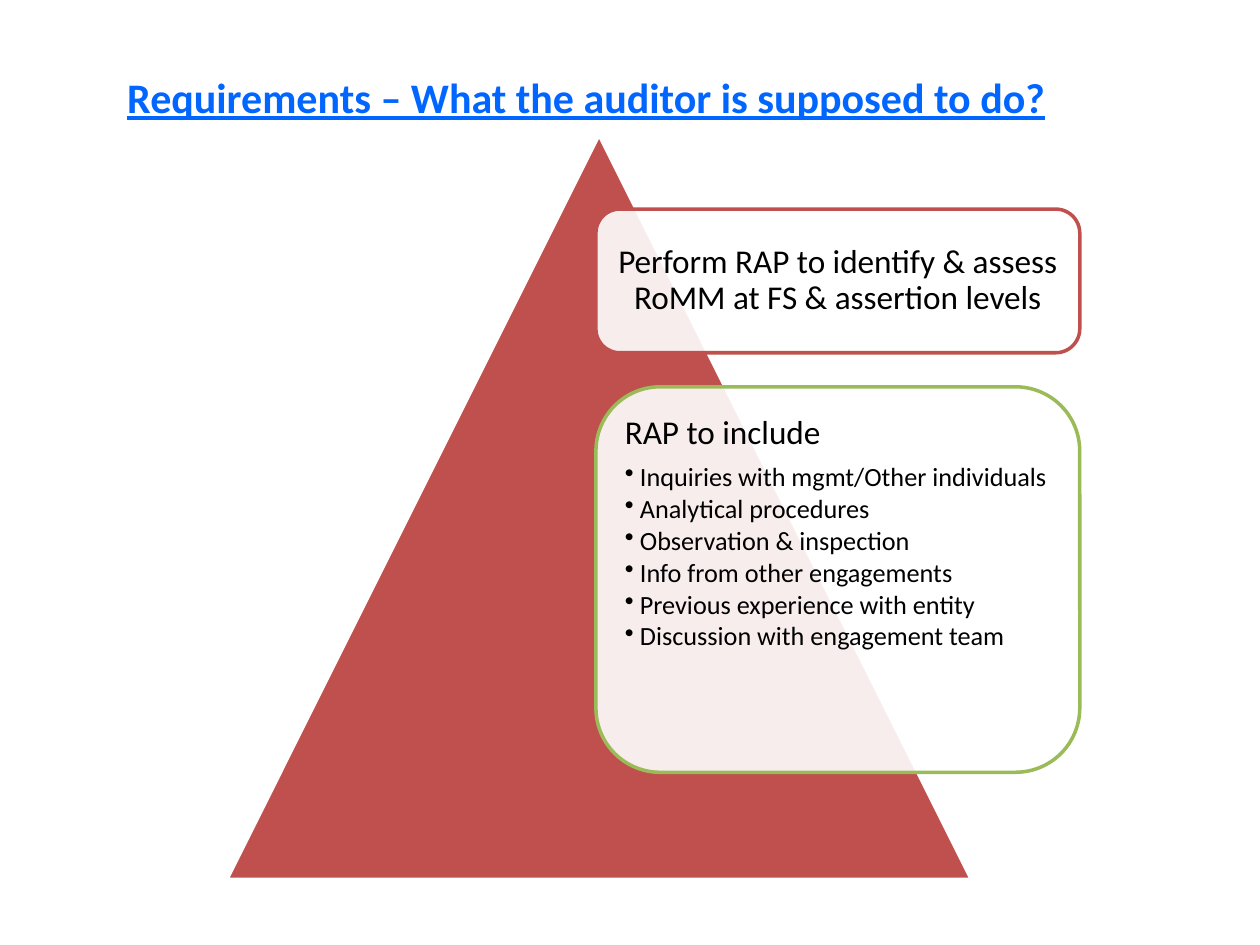
from dataclasses import dataclass

from lxml.etree import SubElement
from pptx import Presentation
from pptx.dml.color import RGBColor
from pptx.enum.shapes import MSO_SHAPE as Kind
from pptx.enum.text import MSO_ANCHOR as Anchor, MSO_AUTO_SIZE as Fit, PP_ALIGN as Align
from pptx.oxml.ns import qn
from pptx.util import Inches, Pt

FONT = "Calibri"
BLUE = RGBColor(0x00, 0x66, 0xFF)
RED = RGBColor(0xC0, 0x50, 0x4D)
GREEN = RGBColor(0x9B, 0xBB, 0x59)
WHITE = RGBColor(0xFF, 0xFF, 0xFF)
BLACK = RGBColor(0x00, 0x00, 0x00)

CARD_LEFT, CARD_WIDTH = 4.73, 3.84


@dataclass
class Card:
    top: float
    height: float
    edge: RGBColor
    head: str
    items: tuple[str, ...] = ()


CARDS = (
    Card(1.66, 1.14, RED,
         "Perform RAP to identify & assess RoMM at FS & assertion levels"),
    Card(3.07, 3.06, GREEN, "RAP to include", (
        "Inquiries with mgmt/Other individuals",
        "Analytical procedures",
        "Observation & inspection",
        "Info from other engagements",
        "Previous experience with entity",
        "Discussion with engagement team",
    )),
)


def add_form(slide, kind: Kind, box: tuple[float, ...], fill: RGBColor, edge: RGBColor):
    form = slide.shapes.add_shape(kind, *map(Inches, box))
    form.shadow.inherit = False
    form.fill.solid()
    form.fill.fore_color.rgb = fill
    form.line.color.rgb = edge
    form.line.width = Pt(2)
    return form


def set_font(para, size: float, color: RGBColor) -> None:
    para.font.name = FONT
    para.font.size = Pt(size)
    para.font.color.rgb = color


def add_bullet(para) -> None:
    props = para._p.get_or_add_pPr()
    props.set("marL", str(Inches(0.12)))
    props.set("indent", str(-Inches(0.12)))
    SubElement(props, qn("a:buChar")).set("char", "•")


def add_card(slide, card: Card) -> None:
    box = (CARD_LEFT, card.top, CARD_WIDTH, card.height)
    form = add_form(slide, Kind.ROUNDED_RECTANGLE, box, WHITE, card.edge)
    # Let the triangle show faintly through the card
    color = form.fill._xPr.find(qn("a:solidFill"))[0]
    SubElement(color, qn("a:alpha")).set("val", "90000")

    frame = form.text_frame
    frame.word_wrap = True
    frame.margin_left = frame.margin_right = Inches(0.08)
    frame.margin_top = frame.margin_bottom = Inches(0.08)
    frame.vertical_anchor = Anchor.TOP if card.items else Anchor.MIDDLE

    for row, text in enumerate((card.head, *card.items)):
        para = frame.add_paragraph() if row else frame.paragraphs[0]
        para.text = text
        para.alignment = Align.LEFT if card.items else Align.CENTER
        para.line_spacing = 0.9
        para.space_after = Pt(2 if row else 7)
        set_font(para, 15 if row else 19, BLACK)
        if row:
            para.level = 1
            add_bullet(para)


def add_title(slide, text: str) -> None:
    title = slide.shapes.title
    title.left, title.top = Inches(0.91), Inches(0.52)
    title.width, title.height = Inches(7.56), Inches(0.5)
    frame = title.text_frame
    frame.text = text
    frame.word_wrap = False
    frame.auto_size = Fit.SHAPE_TO_FIT_TEXT
    frame.vertical_anchor = Anchor.TOP
    para = frame.paragraphs[0]
    para.alignment = Align.LEFT
    set_font(para, 24, BLUE)
    para.font.bold = True
    para.font.underline = True


def main() -> None:
    deck = Presentation()
    deck.slide_width, deck.slide_height = Inches(10), Inches(7.5)
    slide = deck.slides.add_slide(deck.slide_layouts[5])

    add_title(slide, "Requirements – What the auditor is supposed to do?")

    # Pyramid behind the cards
    add_form(slide, Kind.ISOSCELES_TRIANGLE, (1.8, 1.07, 5.91, 5.91), RED, WHITE)
    for card in CARDS:
        add_card(slide, card)

    deck.save("out.pptx")


if __name__ == "__main__":
    main()
